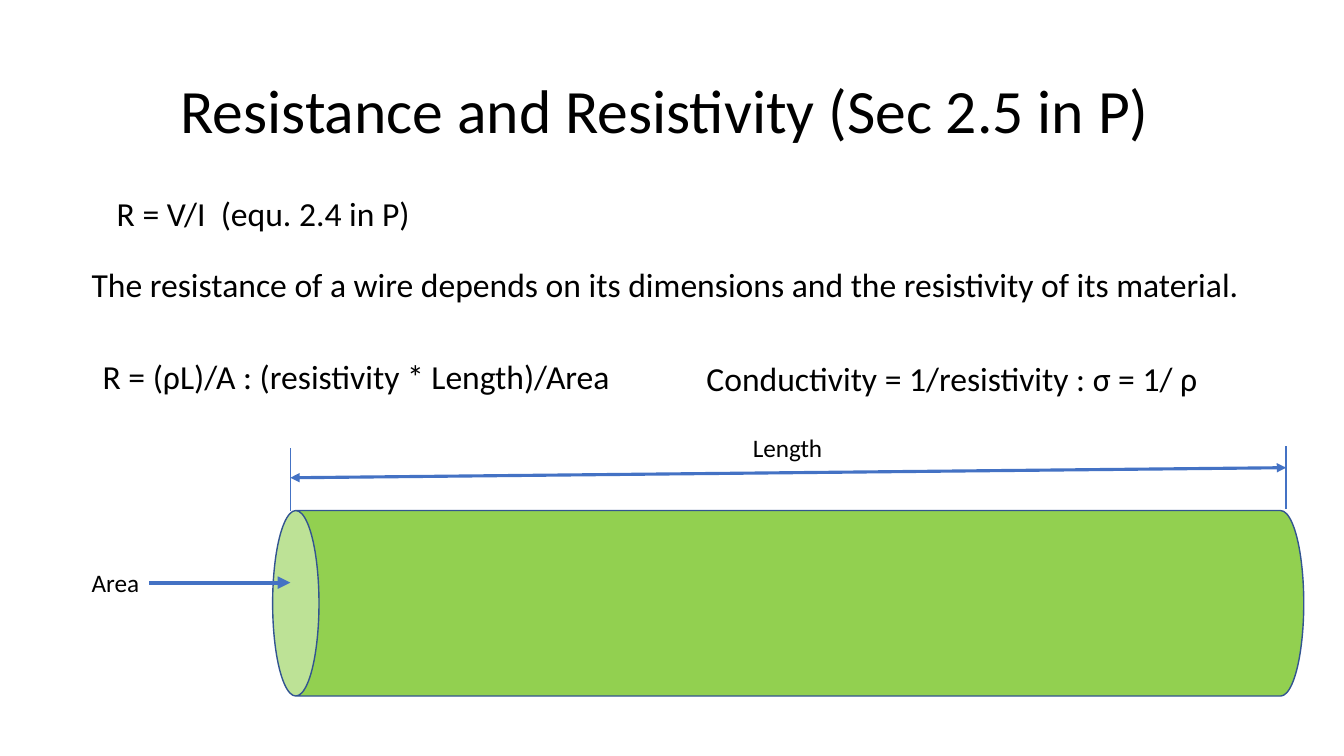
from dataclasses import dataclass

from lxml import etree
from pptx import Presentation
from pptx.dml.color import RGBColor
from pptx.enum.shapes import MSO_CONNECTOR, MSO_SHAPE
from pptx.enum.text import MSO_ANCHOR, MSO_AUTO_SIZE, PP_ALIGN
from pptx.oxml.ns import qn
from pptx.slide import Slide
from pptx.util import Emu, Inches, Pt

BLACK = RGBColor(0x00, 0x00, 0x00)
GREEN = RGBColor(0x92, 0xD0, 0x50)
BLUE = RGBColor(0x44, 0x72, 0xC4)
DARK_BLUE = RGBColor(0x32, 0x54, 0x91)

CAN = MSO_SHAPE.CAN
STRAIGHT = MSO_CONNECTOR.STRAIGHT
CENTER = PP_ALIGN.CENTER
MIDDLE = MSO_ANCHOR.MIDDLE
FIT_SHAPE = MSO_AUTO_SIZE.SHAPE_TO_FIT_TEXT

FONT = "Calibri"
BLANK_LAYOUT = 6
SLIDE_WIDTH = Inches(40 / 3)
SLIDE_HEIGHT = Inches(7.5)
COLUMNS, ROWS = 160, 90

WIRE_START, WIRE_END = 34.56, 153.12
AREA_ROW = 69.36
BODY_HEIGHT, LABEL_HEIGHT = 6, 4.8
BODY_SIZE, LABEL_SIZE = 24, 18


@dataclass(frozen=True)
class Box:
    left: float
    top: float
    width: float
    height: float


@dataclass(frozen=True)
class Caption:
    text: str
    box: Box
    size: int
    is_title: bool = False


@dataclass(frozen=True)
class Line:
    start: tuple[float, float]
    end: tuple[float, float]
    weight: float
    arrowheads: tuple[str, ...] = ()


CAPTIONS = (
    Caption("Resistance and Resistivity (Sec 2.5 in P) ",
            Box(11.04, 4.8, 138, 17.4), 44, is_title=True),
    Caption("R = V/I  (equ. 2.4 in P)",
            Box(12.72, 22.32, 37.56, BODY_HEIGHT), BODY_SIZE),
    Caption("The resistance of a wire depends on its dimensions and the "
            "resistivity of its material.",
            Box(9.72, 30.84, 140.28, BODY_HEIGHT), BODY_SIZE),
    Caption("R = (ρL)/A : (resistivity * Length)/Area",
            Box(11.04, 41.76, 63.36, BODY_HEIGHT), BODY_SIZE),
    Caption("Conductivity = 1/resistivity : σ = 1/ ρ",
            Box(82.92, 42, 61.44, BODY_HEIGHT), BODY_SIZE),
    Caption("Area", Box(9.72, 66.96, 8.16, LABEL_HEIGHT), LABEL_SIZE),
    Caption("Length", Box(88.44, 50.88, 10.8, LABEL_HEIGHT), LABEL_SIZE),
)

WIRE = Box(82.8, 10.44, 22.08, 122.76)

LINES = (
    Line((17.76, AREA_ROW), (WIRE_START, AREA_ROW), 3, ("a:tailEnd",)),
    Line((WIRE_START, 56.88), (WIRE_END, 55.68), 2.25,
         ("a:headEnd", "a:tailEnd")),
    Line((WIRE_START, 60.84), (WIRE_START, 53.28), 1),
    Line((WIRE_END, 60.6), (WIRE_END, 53.04), 1),
)


def across(columns: float) -> Emu:
    """Convert grid columns to a horizontal length."""
    return Emu(round(SLIDE_WIDTH * columns / COLUMNS))


def down(rows: float) -> Emu:
    """Convert grid rows to a vertical length."""
    return Emu(round(SLIDE_HEIGHT * rows / ROWS))


def place(box: Box) -> tuple[Emu, Emu, Emu, Emu]:
    """Convert a grid box to left, top, width and height."""
    return across(box.left), down(box.top), across(box.width), down(box.height)


def draw_caption(slide: Slide, caption: Caption) -> None:
    """Add the title, an equation or a label as text."""
    frame = slide.shapes.add_textbox(*place(caption.box)).text_frame
    frame.text = caption.text
    paragraph = frame.paragraphs[0]
    frame.word_wrap = caption.is_title
    if caption.is_title:
        frame.vertical_anchor = MIDDLE
        paragraph.alignment = CENTER
        paragraph.line_spacing = 0.9
    else:
        frame.auto_size = FIT_SHAPE
    font = paragraph.runs[0].font
    font.name = FONT
    font.size = Pt(caption.size)
    font.color.rgb = BLACK


def draw_wire(slide: Slide, box: Box) -> None:
    """Add the wire as a cylinder lying on its side."""
    wire = slide.shapes.add_shape(CAN, *place(box))
    wire.rotation = 270
    wire.shadow.inherit = False
    wire.fill.solid()
    wire.fill.fore_color.rgb = GREEN
    wire.line.color.rgb = DARK_BLUE
    wire.line.width = Pt(1)


def draw_line(slide: Slide, line: Line) -> None:
    """Add a dimension line or pointer with its arrowheads."""
    (start_x, start_y), (end_x, end_y) = line.start, line.end
    connector = slide.shapes.add_connector(
        STRAIGHT, across(start_x), down(start_y), across(end_x), down(end_y))
    connector.line.color.rgb = BLUE
    connector.line.width = Pt(line.weight)
    properties = connector.element.spPr
    outline = properties.find(qn("a:ln"))
    for arrowhead in line.arrowheads:
        etree.SubElement(outline, qn(arrowhead), type="triangle")
    etree.SubElement(properties, qn("a:effectLst"))


def main() -> None:
    """Build the resistance and resistivity slide."""
    presentation = Presentation()
    presentation.slide_width = SLIDE_WIDTH
    presentation.slide_height = SLIDE_HEIGHT
    slide = presentation.slides.add_slide(
        presentation.slide_layouts[BLANK_LAYOUT])
    draw_wire(slide, WIRE)
    for caption in CAPTIONS:
        draw_caption(slide, caption)
    for line in LINES:
        draw_line(slide, line)
    presentation.save("out.pptx")


if __name__ == "__main__":
    main()
